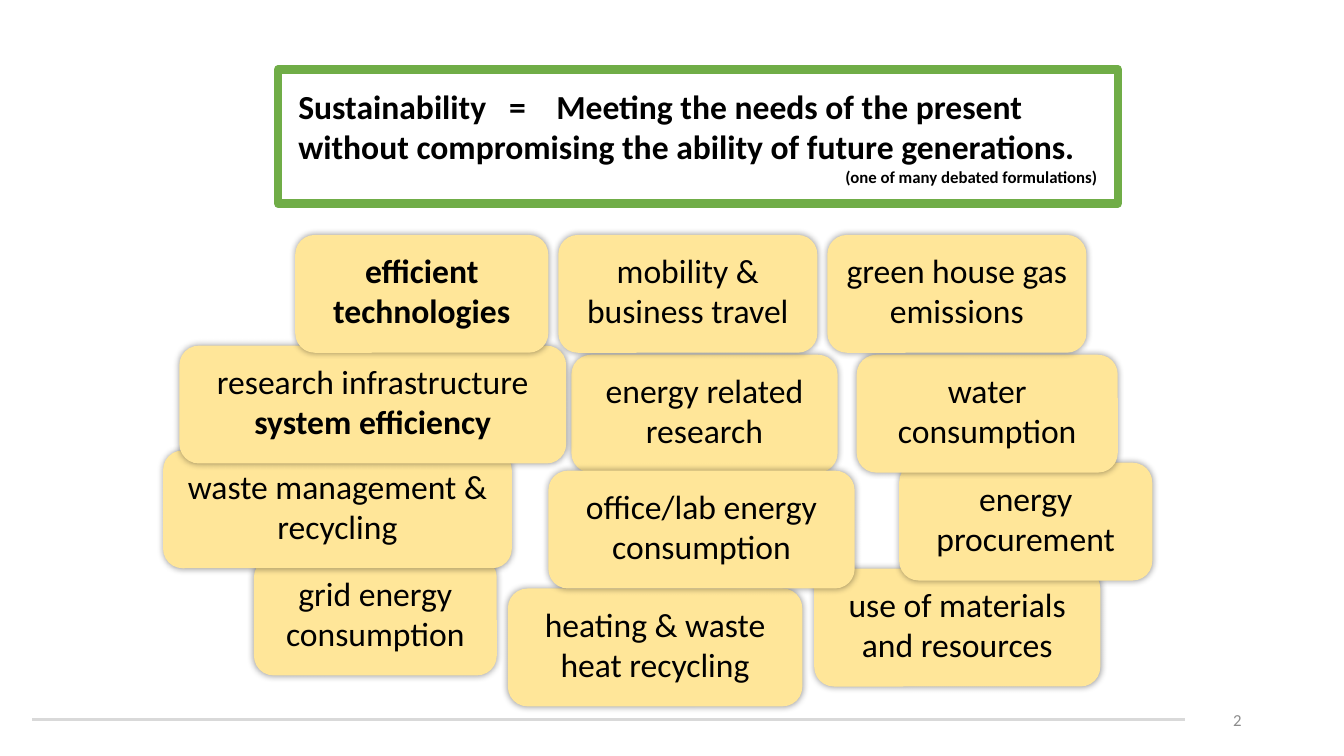
from dataclasses import dataclass

from lxml import etree
from pptx import Presentation
from pptx import util as u
from pptx.dml.color import RGBColor
from pptx.enum import shapes, text
from pptx.oxml import parse_xml
from pptx.oxml.ns import nsdecls, qn

# Topics from back to front: left, top, width in cm, then paragraphs.
# A paragraph is a list of (words, bold) spans.
TOPICS = [
    (14.4, 8.94, 6.71, [[("energy related research", False)]]),
    (20.52, 14.33, 7.21, [[("use of materials and resources", False)]]),
    (6.4, 14.05, 6.12, [[("grid energy consumption", False)]]),
    (22.66, 11.66, 6.38, [[("energy procurement", False)]]),
    (4.11, 11.35, 8.79, [[("waste management & recycling", False)]]),
    (21.59, 8.94, 6.58, [[("water consumption", False)]]),
    (4.52, 8.71, 9.75, [[("research infrastructure ", False), ("system efficiency", True)]]),
    (14.07, 5.92, 6.53, [[("mobility &", False)], [("business travel", False)]]),
    (12.8, 14.83, 7.42, [[("heating & waste heat recycling", False)]]),
    (13.82, 11.86, 7.72, [[("office/lab energy consumption", False)]]),
    (7.44, 5.92, 6.38, [[("efficient technologies", True)]]),
    (20.85, 5.92, 6.53, [[("green house gas emissions", False)]]),
]
TOPIC_HEIGHT = 2.97
DEFINITION = ("Sustainability\t=\tMeeting the needs of the present "
              "without compromising the ability of future generations.")
DEFINITION_TABS = (5.31, 6.5)
REMARK = "(one of many debated formulations)"
PAGE_NUMBER = "2"


@dataclass(frozen=True)
class Theme:
    font: str = "Calibri"
    ink: str = "000000"
    card: str = "FFE699"
    frame: str = "70AD47"
    rule: str = "D9D9D9"
    muted: str = "8C8C8C"
    body: int = 24
    small: int = 12


THEME = Theme()


def rgb(value):
    return RGBColor.from_string(value)


def style(para, size=THEME.body, color=THEME.ink, bold=False, align=text.PP_ALIGN.LEFT):
    para.alignment = align
    font = para.font
    font.name, font.size, font.bold = THEME.font, u.Pt(size), bold
    font.color.rgb = rgb(color)


def set_frame(shape, left, top, right, bottom, anchor):
    """Set wrapping, anchor and insets (cm) and return the text frame."""
    frame = shape.text_frame
    frame.word_wrap = True
    frame.vertical_anchor = anchor
    frame.margin_left, frame.margin_top = u.Cm(left), u.Cm(top)
    frame.margin_right, frame.margin_bottom = u.Cm(right), u.Cm(bottom)
    return frame


def add_glow_shadow(shape):
    """Add a soft shadow with no offset."""
    shape.shadow.inherit = False
    effects = shape._element.spPr.find(qn("a:effectLst"))
    effects.append(parse_xml(
        f'<a:outerShdw {nsdecls("a")} blurRad="{u.Pt(5)}" dist="0" dir="0" '
        'algn="ctr" rotWithShape="0"><a:srgbClr val="000000">'
        '<a:alpha val="40000"/></a:srgbClr></a:outerShdw>'))


def add_topic(page, left, top, width, paragraphs):
    card = page.shapes.add_shape(shapes.MSO_SHAPE.ROUNDED_RECTANGLE, u.Cm(left),
                                 u.Cm(top), u.Cm(width), u.Cm(TOPIC_HEIGHT))
    card.fill.solid()
    card.fill.fore_color.rgb = rgb(THEME.card)
    card.line.fill.background()
    add_glow_shadow(card)
    frame = set_frame(card, 0.33, 0, 0.33, 0.18, text.MSO_ANCHOR.MIDDLE)
    for index, spans in enumerate(paragraphs):
        para = frame.add_paragraph() if index else frame.paragraphs[0]
        style(para, bold=spans[0][1], align=text.PP_ALIGN.CENTER)
        for words, bold in spans:
            span = para.add_run()
            span.text = words
            if bold != spans[0][1]:
                span.font.bold = bold


def add_definition(page):
    box = page.shapes.add_shape(shapes.MSO_SHAPE.RECTANGLE, u.Cm(7.01), u.Cm(1.75),
                                u.Cm(21.16), u.Cm(3.38))
    box.shadow.inherit = False
    box.fill.background()
    box.line.color.rgb = rgb(THEME.frame)
    box.line.width = u.Pt(6)
    frame = set_frame(box, 0.51, 0.41, 0.51, 0.41, text.MSO_ANCHOR.TOP)
    para = frame.paragraphs[0]
    para.text = DEFINITION
    tabs = etree.SubElement(para._p.get_or_add_pPr(), qn("a:tabLst"))
    for position in DEFINITION_TABS:
        etree.SubElement(tabs, qn("a:tab"), pos=str(u.Cm(position)), algn="l")
    style(para, bold=True)
    remark = frame.add_paragraph()
    remark.text = REMARK
    style(remark, size=THEME.small, bold=True, align=text.PP_ALIGN.RIGHT)


def add_footer(page):
    rule = page.shapes.add_connector(shapes.MSO_CONNECTOR.STRAIGHT, u.Cm(0.81),
                                     u.Cm(18.14), u.Cm(29.87), u.Cm(18.14))
    rule.line.color.rgb = rgb(THEME.rule)
    rule.line.width = u.Pt(2.25)
    etree.SubElement(rule._element.spPr, qn("a:effectLst"))
    box = page.shapes.add_textbox(u.Cm(29.69), u.Cm(17.63), u.Cm(1.85), u.Cm(1.02))
    para = set_frame(box, 0.25, 0.13, 0.25, 0.13, text.MSO_ANCHOR.MIDDLE).paragraphs[0]
    para.text = PAGE_NUMBER
    style(para, size=THEME.small, color=THEME.muted, align=text.PP_ALIGN.RIGHT)


def main():
    deck = Presentation()
    deck.slide_width, deck.slide_height = u.Cm(33.87), u.Cm(19.05)
    page = deck.slides.add_slide(deck.slide_layouts[6])
    add_footer(page)
    for topic in TOPICS:
        add_topic(page, *topic)
    add_definition(page)
    deck.save("out.pptx")


if __name__ == "__main__":
    main()
